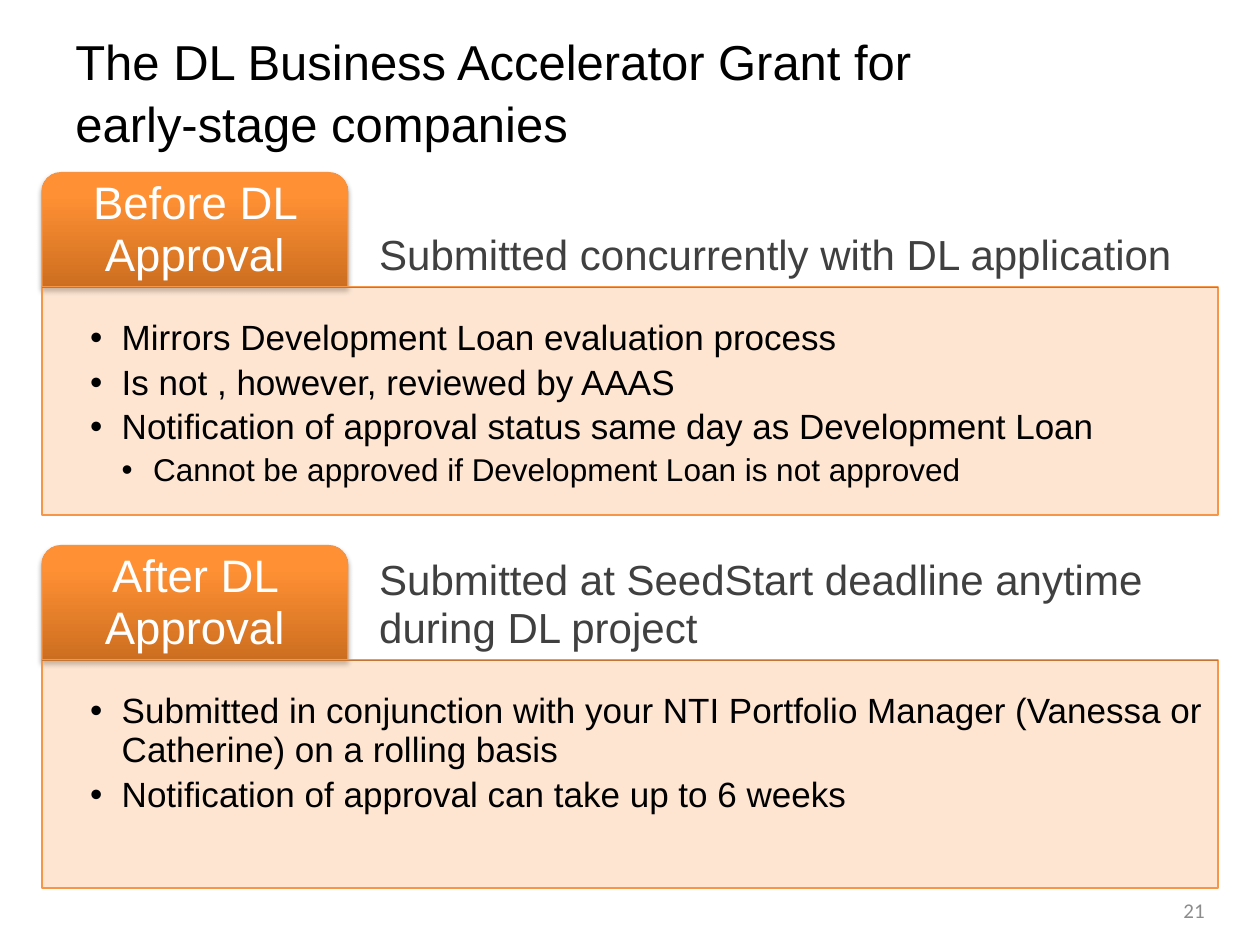
import pptx
import pptx.util
import pptx.dml.color
import pptx.enum.shapes
import pptx.enum.text
import pptx.oxml
import pptx.oxml.ns

Inches, Pt = pptx.util.Inches, pptx.util.Pt
Shape = pptx.enum.shapes.MSO_SHAPE
Align = pptx.enum.text.PP_ALIGN
Anchor = pptx.enum.text.MSO_ANCHOR

TITLE = "The DL Business Accelerator Grant for early-stage companies"
PAGE_NUMBER = "21"
STAGES = [
    {
        "tab": "Before DL Approval",
        "summary": "Submitted concurrently with DL application",
        "bullets": [
            (0, "Mirrors Development Loan evaluation process"),
            (0, "Is not , however, reviewed by AAAS"),
            (0, "Notification of approval status same day as Development Loan"),
            (1, "Cannot be approved if Development Loan is not approved"),
        ],
    },
    {
        "tab": "After DL Approval",
        "summary": "Submitted at SeedStart deadline anytime\vduring DL project",
        "bullets": [
            (0, "Submitted in conjunction with your NTI Portfolio Manager "
                "(Vanessa or Catherine) on a rolling basis"),
            (0, "Notification of approval can take up to 6 weeks"),
        ],
    },
]

THEME = {
    "title": {"name": "Arial", "size": 28, "color": "000000"},
    "tab": {"name": "Arial", "size": 26, "color": "FFFFFF"},
    "summary": {"name": "Arial", "size": 24, "color": "404040"},
    "bullets": [
        {"name": "Arial", "size": 20, "color": "000000"},
        {"name": "Arial", "size": 18, "color": "000000"},
    ],
    "number": {"name": "Calibri", "size": 12, "color": "8C8C8C"},
    "panel_fill": "FAC090",
    "panel_opacity": 40,
    "panel_line": "F79646",
    "tab_line": "F69240",
    "rule": "C57533",
    "tab_gradient": [(0, "CC6E20"), (80, "FF9034"), (100, "FF9136")],
}

WIDTH, HEIGHT = 10, 7.5
MARGIN = WIDTH / 30
CONTENT_WIDTH = WIDTH - 2 * MARGIN
TAB_WIDTH = 0.26 * CONTENT_WIDTH
FIRST_TOP, STAGE_PITCH = 1.37, 2.96
TAB_HEIGHT, PANEL_HEIGHT = 0.91, 1.81
TIGHT, TITLE_SPACING = 0.94, 1.05
INDENT = 0.25


def color(value):
    return pptx.dml.color.RGBColor.from_string(value)


def xml(body):
    return pptx.oxml.parse_xml(body.replace(
        ">", f' {pptx.oxml.ns.nsdecls("a")}>', 1) if "/>" not in body[:body.find(">") + 1]
        else body.replace("/>", f' {pptx.oxml.ns.nsdecls("a")}/>', 1))


def set_format(target, values):
    for name, value in values.items():
        setattr(target, name, value)


def style_font(font, style):
    set_format(font, {"name": style["name"], "size": Pt(style["size"])})
    font.color.rgb = color(style["color"])


def set_frame(frame, insets, anchor):
    left, top, right, bottom = map(Inches, insets)
    set_format(frame, {
        "word_wrap": True, "vertical_anchor": anchor,
        "margin_left": left, "margin_top": top,
        "margin_right": right, "margin_bottom": bottom,
    })


def write(paragraph, text, style, **layout):
    paragraph.text = text
    set_format(paragraph, layout)
    for run in paragraph.runs:
        style_font(run.font, style)


def add_text(slide, box, text, style, insets, anchor, **layout):
    frame = slide.shapes.add_textbox(*map(Inches, box)).text_frame
    set_frame(frame, insets, anchor)
    write(frame.paragraphs[0], text, style, **layout)


def add_box(slide, preset, box, line, line_width):
    shape = slide.shapes.add_shape(preset, *map(Inches, box))
    shape.shadow.inherit = False
    shape.line.color.rgb = color(line)
    shape.line.width = Pt(line_width)
    return shape


def add_panel(slide, box):
    panel = add_box(slide, Shape.RECTANGLE, box, THEME["panel_line"], 1)
    panel.fill.solid()
    panel.fill.fore_color.rgb = color(THEME["panel_fill"])
    fill_color = panel._element.spPr.find(".//" + pptx.oxml.ns.qn("a:srgbClr"))
    fill_color.append(xml(f'<a:alpha val="{THEME["panel_opacity"] * 1000}"/>'))


def add_tab(slide, box, text):
    tab = add_box(slide, Shape.ROUND_2_SAME_RECTANGLE, box, THEME["tab_line"], 0.75)
    stops = "".join(f'<a:gs pos="{position * 1000}"><a:srgbClr val="{value}"/></a:gs>'
                    for position, value in THEME["tab_gradient"])
    properties = tab._element.spPr
    properties.find(pptx.oxml.ns.qn("a:prstGeom")).addnext(xml(
        f'<a:gradFill><a:gsLst>{stops}</a:gsLst><a:lin ang="16200000" scaled="0"/></a:gradFill>'))
    properties.find(pptx.oxml.ns.qn("a:effectLst")).append(xml(
        '<a:outerShdw blurRad="40000" dist="23000" dir="5400000" rotWithShape="0">'
        '<a:srgbClr val="000000"><a:alpha val="35000"/></a:srgbClr></a:outerShdw>'))
    set_frame(tab.text_frame, (0.08, 0, 0.08, 0.04), Anchor.MIDDLE)
    write(tab.text_frame.paragraphs[0], text, THEME["tab"],
          alignment=Align.CENTER, line_spacing=TIGHT)


def add_rule(slide, left, top, width):
    rule = slide.shapes.add_connector(
        pptx.enum.shapes.MSO_CONNECTOR.STRAIGHT,
        *map(Inches, (left, top, left + width, top)))
    rule.line.color.rgb = color(THEME["rule"])
    rule.line.width = Pt(0.75)
    rule._element.spPr.append(xml("<a:effectLst/>"))


def add_bullets(slide, box, bullets):
    frame = slide.shapes.add_textbox(*map(Inches, box)).text_frame
    set_frame(frame, (0.05, 0.25, 0.05, 0.05), Anchor.TOP)
    for index, (level, text) in enumerate(bullets):
        paragraph = frame.add_paragraph() if index else frame.paragraphs[0]
        properties = paragraph._p.get_or_add_pPr()
        properties.set("marL", str(Inches(INDENT * (level + 1))))
        properties.set("indent", str(-Inches(INDENT)))
        properties.append(xml('<a:buFont typeface="Arial"/>'))
        properties.append(xml('<a:buChar char="•"/>'))
        write(paragraph, text, THEME["bullets"][level],
              level=level, line_spacing=TIGHT, space_after=Pt(3))


def add_stage(slide, top, stage):
    panel_top = top + TAB_HEIGHT
    summary_left = MARGIN + TAB_WIDTH
    add_tab(slide, (MARGIN, top, TAB_WIDTH, TAB_HEIGHT), stage["tab"])
    add_panel(slide, (MARGIN, panel_top, CONTENT_WIDTH, PANEL_HEIGHT))
    add_rule(slide, MARGIN, panel_top, CONTENT_WIDTH)
    add_text(slide, (summary_left, top, CONTENT_WIDTH - TAB_WIDTH, TAB_HEIGHT),
             stage["summary"], THEME["summary"], (0.25, 0.06, 0.06, 0.06),
             Anchor.BOTTOM, line_spacing=TIGHT)
    add_bullets(slide, (2 * MARGIN, panel_top, CONTENT_WIDTH - MARGIN, PANEL_HEIGHT),
                stage["bullets"])


def main():
    presentation = pptx.Presentation()
    set_format(presentation, {"slide_width": Inches(WIDTH), "slide_height": Inches(HEIGHT)})
    slide = presentation.slides.add_slide(presentation.slide_layouts[6])
    add_text(slide, (0.5, 0.17, 7.42, 1.25), TITLE, THEME["title"],
             (0.1, 0.06, 0.1, 0.05), Anchor.TOP, line_spacing=TITLE_SPACING)
    for index, stage in enumerate(STAGES):
        add_stage(slide, FIRST_TOP + index * STAGE_PITCH, stage)
    add_text(slide, (7.33, 7.02, 2.33, 0.4), PAGE_NUMBER, THEME["number"],
             (0.1, 0.05, 0.1, 0.05), Anchor.MIDDLE, alignment=Align.RIGHT)
    presentation.save("out.pptx")


if __name__ == "__main__":
    main()
